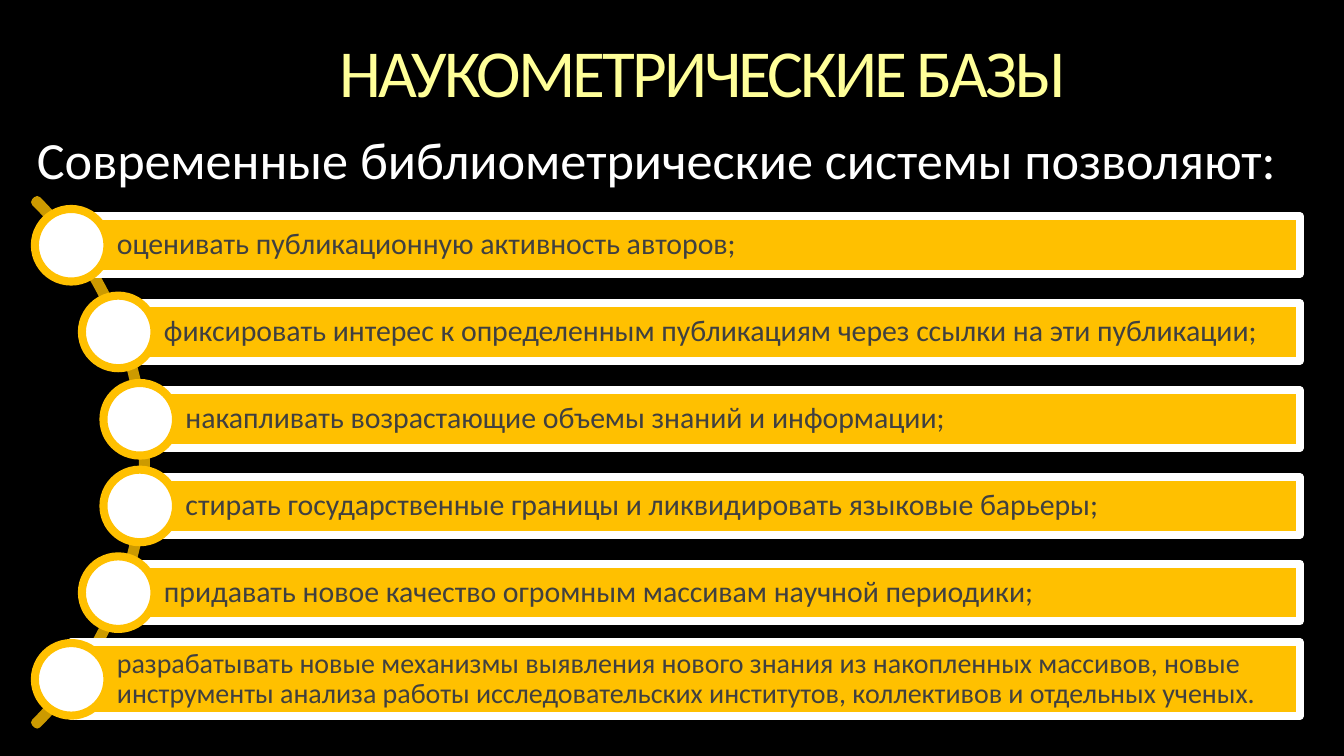
from dataclasses import dataclass

from lxml.etree import SubElement
from pptx import Presentation
from pptx.dml.color import RGBColor
from pptx.enum.shapes import MSO_SHAPE
from pptx.enum.text import MSO_ANCHOR, PP_ALIGN
from pptx.oxml.ns import qn
from pptx.shapes.autoshape import Shape
from pptx.util import Emu, Pt

PX = 4572  # 200 px to the inch
WIDTH, HEIGHT = 2000, 1125
RIGHT = 1934
FIRST, PITCH = 365, 129.3
DOT = 108
AMBER, WHITE = "FFC000", "FFFFFF"


@dataclass
class Item:
    left: int
    text: str
    high: int = 86
    size: int = 16


ITEMS = [
    Item(106, "оценивать публикационную активность авторов;"),
    Item(176, "фиксировать интерес к определенным публикациям через ссылки на эти публикации;"),
    Item(208, "накапливать возрастающие объемы знаний и информации;"),
    Item(208, "стирать государственные границы и ликвидировать языковые барьеры;"),
    Item(176, "придавать новое качество огромным массивам научной периодики;"),
    Item(106, "разрабатывать новые механизмы выявления нового знания из накопленных массивов, "
              "новые инструменты анализа работы исследовательских институтов, коллективов "
              "и отдельных ученых.", high=110, size=15),
]


def px(*vals: int) -> list[Emu]:
    return [Emu(val * PX) for val in vals]


def tint(code: str) -> RGBColor:
    return RGBColor.from_string(code)


def write(shape: Shape, text: str, *, size: int, color: str, align=PP_ALIGN.LEFT,
          anchor=MSO_ANCHOR.MIDDLE, inset=(0, 0, 0, 0), track: float = 0) -> None:
    frame = shape.text_frame
    frame.word_wrap = True
    frame.vertical_anchor = anchor
    (frame.margin_left, frame.margin_top,
     frame.margin_right, frame.margin_bottom) = px(*inset)
    para = frame.paragraphs[0]
    para.alignment = align
    para.line_spacing = 0.9
    run = para.add_run()
    run.text = text
    run.font.name = "Calibri"
    run.font.size = Pt(size)
    run.font.color.rgb = tint(color)
    if track:
        run.font._element.set("spc", str(round(track * 100)))


def draw(shapes, kind: MSO_SHAPE, box: tuple[int, ...], line: str,
         fill: str | None = None) -> Shape:
    """Add a preset shape with a thick, round-joined outline."""
    shape = shapes.add_shape(kind, *px(*box))
    shape.shadow.inherit = False
    if fill:
        shape.fill.solid()
        shape.fill.fore_color.rgb = tint(fill)
    else:
        shape.fill.background()
    shape.line.color.rgb = tint(line)
    shape.line.width = Pt(4.33)
    SubElement(shape.line._get_or_add_ln(), qn("a:round"))
    return shape


def add_item(shapes, item: Item, mid: int) -> None:
    """Draw a bar and the dot centred on its left edge."""
    bar = draw(shapes, MSO_SHAPE.RECTANGLE,
               (item.left, mid - item.high // 2, RIGHT - item.left, item.high),
               WHITE, AMBER)
    write(bar, item.text, size=item.size, color="404040", inset=(68, 8, 8, 8))
    half = DOT // 2
    draw(shapes, MSO_SHAPE.OVAL, (item.left - half, mid - half, DOT, DOT), AMBER, WHITE)


def main() -> None:
    deck = Presentation()
    deck.slide_width, deck.slide_height = px(WIDTH, HEIGHT)
    slide = deck.slides.add_slide(deck.slide_layouts[6])
    slide.background.fill.solid()
    slide.background.fill.fore_color.rgb = tint("000000")
    shapes = slide.shapes

    title = shapes.add_textbox(*px(276, 27, 1540, 172))
    write(title, "НАУКОМЕТРИЧЕСКИЕ БАЗЫ", size=36, color="FFFF99",
          align=PP_ALIGN.CENTER, track=-1.5)
    lead = shapes.add_textbox(*px(55, 200, 1890, 76))
    write(lead, "Современные библиометрические системы позволяют:", size=28,
          color=WHITE, anchor=MSO_ANCHOR.TOP)

    arc = draw(shapes, MSO_SHAPE.BLOCK_ARC, (-887, 136, 1104, 1104), "CC9A00")
    for i, val in enumerate((189, 27, 0.004)):  # from 315 to 45 degrees, hair-thin
        arc.adjustments[i] = val

    for i, item in enumerate(ITEMS):
        add_item(shapes, item, FIRST + round(PITCH * i))
    deck.save("out.pptx")


if __name__ == "__main__":
    main()
